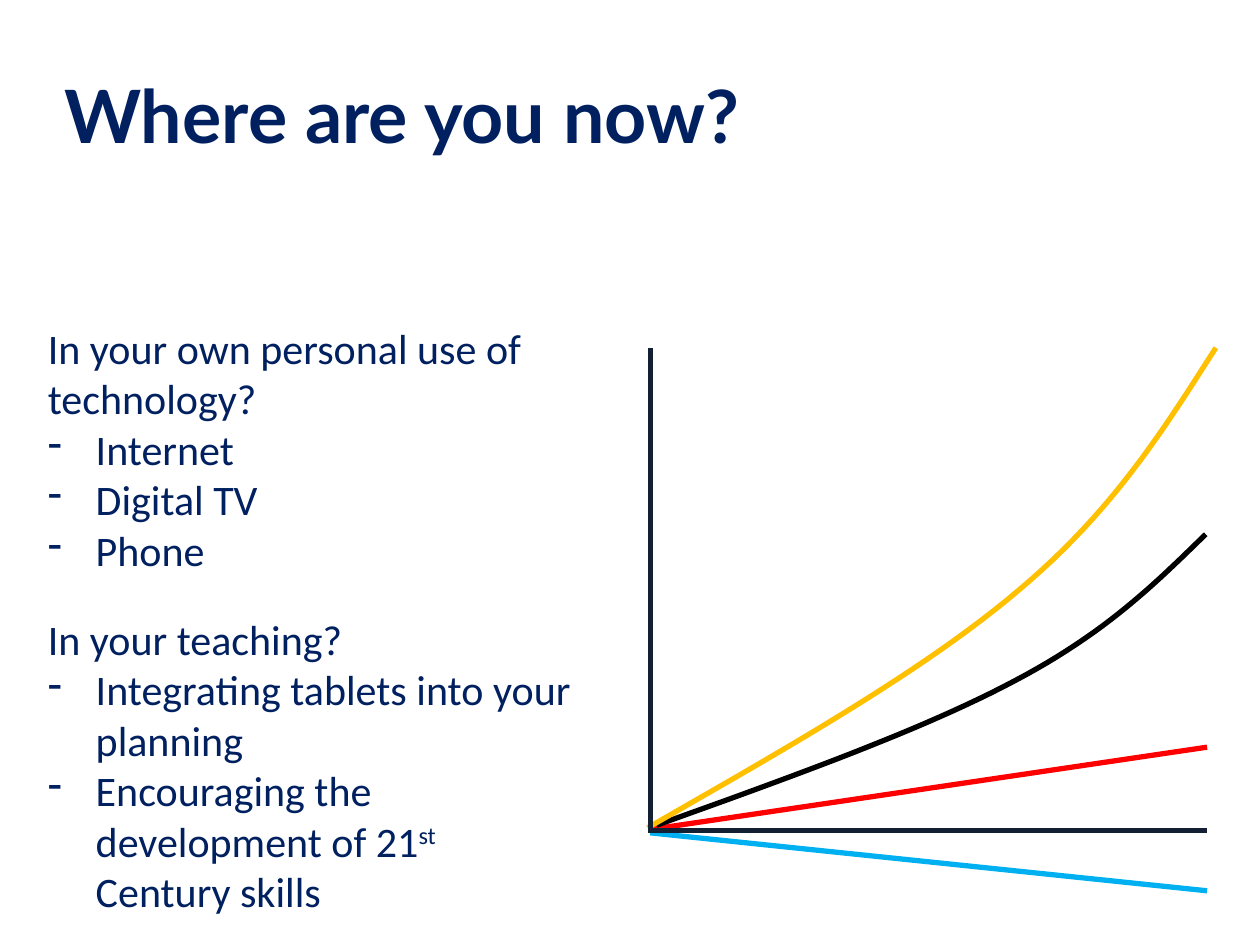
"""Builds the slide "Where are you now?" with its growth curves and questions."""
import pptx
import pptx.dml.color
import pptx.enum.shapes
import pptx.enum.text
import pptx.oxml.ns
import pptx.util
from lxml import etree

Inches = pptx.util.Inches
Pt = pptx.util.Pt
RGBColor = pptx.dml.color.RGBColor

NAVY = RGBColor(0x00, 0x20, 0x60)
AXIS = RGBColor(0x13, 0x1F, 0x32)
SKY = RGBColor(0x00, 0xB0, 0xF0)
RED = RGBColor(0xFF, 0x00, 0x00)
BLACK = RGBColor(0x00, 0x00, 0x00)
AMBER = RGBColor(0xFF, 0xC0, 0x00)
WHITE = RGBColor(0xFF, 0xFF, 0xFF)

LINE_WIDTH = Pt(3)
CURVE_STEPS = 24


def draw_line(page, start, end, color):
    line = page.shapes.add_connector(
        pptx.enum.shapes.MSO_CONNECTOR.STRAIGHT, *map(Inches, start + end))
    line.line.color.rgb = color
    line.line.width = LINE_WIDTH
    etree.SubElement(line._element.spPr, pptx.oxml.ns.qn("a:effectLst"))


def set_frame(box, anchor):
    frame = box.text_frame
    frame.word_wrap = True
    frame.vertical_anchor = anchor
    frame.margin_left = frame.margin_right = Inches(0.05)
    frame.margin_top = frame.margin_bottom = Inches(0.05)
    return frame


deck = pptx.Presentation()
deck.slide_width = Inches(10)
deck.slide_height = Inches(7.5)
page = deck.slides.add_slide(deck.slide_layouts[6])

title = page.shapes.add_textbox(Inches(0.46), Inches(0.28), Inches(7.79), Inches(1.25))
frame = set_frame(title, pptx.enum.text.MSO_ANCHOR.MIDDLE)
frame.text = "Where are you now?"
font = frame.paragraphs[0].runs[0].font
font.name = "Lato"
font.size = Pt(42)
font.bold = True
font.color.rgb = NAVY

draw_line(page, (5.16, 6.61), (9.58, 7.07), SKY)
draw_line(page, (5.18, 6.58), (9.58, 5.93), RED)

curves = [
    (BLACK, [(5.21, 6.55), (6.27, 6.17), (7.33, 5.79), (8.06, 5.4),
             (8.78, 5.02), (9.17, 4.63), (9.57, 4.24)]),
    (AMBER, [(5.14, 6.57), (6.24, 5.94), (7.34, 5.32), (8.09, 4.68),
             (8.84, 4.05), (9.24, 3.4), (9.65, 2.76)]),
]
for color, knots in curves:
    points = []
    for first in (0, 3):
        segment = knots[first:first + 4]
        for step in range(1, CURVE_STEPS + 1):
            t = step / CURVE_STEPS
            weights = ((1 - t) ** 3, 3 * t * (1 - t) ** 2, 3 * t ** 2 * (1 - t), t ** 3)
            points.append(tuple(
                Inches(sum(weight * knot[axis] for weight, knot in zip(weights, segment)))
                for axis in (0, 1)))
    builder = page.shapes.build_freeform(*map(Inches, knots[0]))
    builder.add_line_segments(points, close=False)
    curve = builder.convert_to_shape()
    curve.shadow.inherit = False
    curve.fill.background()
    curve.line.color.rgb = color
    curve.line.width = LINE_WIDTH

draw_line(page, (5.16, 6.61), (5.16, 2.76), AXIS)
draw_line(page, (5.18, 6.59), (9.58, 6.59), AXIS)

questions = [
    (2.51, 2.12, "In your own personal use of technology?",
     [["Internet"], ["Digital TV"], ["Phone"]]),
    (4.82, 2.52, "In your teaching?",
     [["Integrating tablets into your planning"],
      ["Encouraging the development of 21", "st", " Century skills"]]),
]
for top, height, question, answers in questions:
    box = page.shapes.add_shape(
        pptx.enum.shapes.MSO_SHAPE.RECTANGLE,
        Inches(0.33), Inches(top), Inches(4.28), Inches(height))
    box.shadow.inherit = False
    box.fill.solid()
    box.fill.fore_color.rgb = WHITE
    box.line.fill.background()
    frame = set_frame(box, pptx.enum.text.MSO_ANCHOR.TOP)
    frame.auto_size = pptx.enum.text.MSO_AUTO_SIZE.SHAPE_TO_FIT_TEXT
    frame.text = question
    for parts in answers:
        para = frame.add_paragraph()
        properties = para._p.get_or_add_pPr()
        properties.set("marL", str(Inches(0.38)))
        properties.set("indent", str(-Inches(0.38)))
        etree.SubElement(properties, pptx.oxml.ns.qn("a:buChar"), char="-")
        for part in parts:
            span = para.add_run()
            span.text = part
            if part == "st":
                span._r.get_or_add_rPr().set("baseline", "30000")
    for para in frame.paragraphs:
        para.alignment = pptx.enum.text.PP_ALIGN.LEFT
        for span in para.runs:
            span.font.name = "Calibri"
            span.font.size = Pt(24)
            span.font.color.rgb = NAVY

deck.save("out.pptx")
